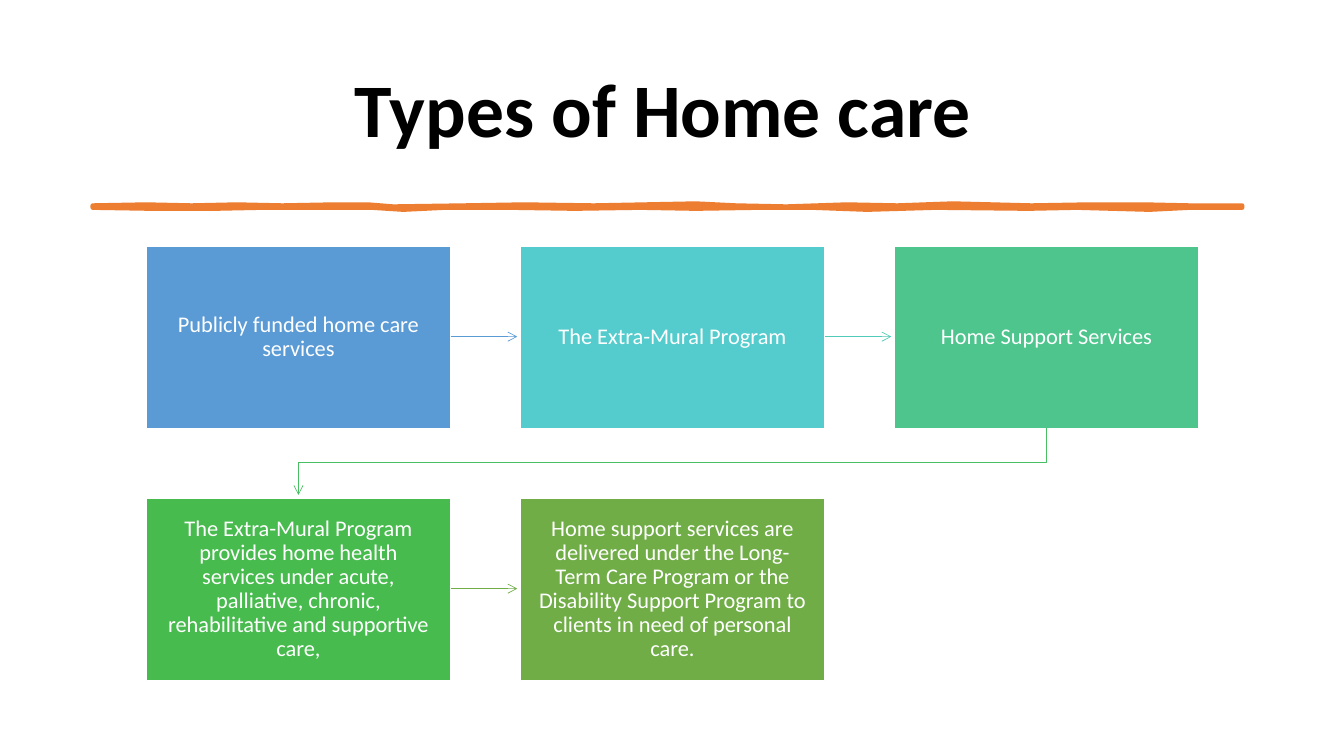
"""Build the "Types of Home care" slide: a title, a hand-drawn rule and a five-step flow."""
from pptx import Presentation
from pptx import util as u
from pptx.dml.color import RGBColor
from pptx.enum import shapes, text
from pptx.oxml import ns
from pptx.oxml import xmlchemy as xc

PX = 9144
SLIDE = (1333, 750)
FONT = "Calibri"
COLORS = {
    "title": "000000", "white": "FFFFFF", "rule": "ED7D31",
    "blue": "5B9BD5", "cyan": "54CCCD", "mint": "4DC58D",
    "green": "48BB4F", "olive": "70AD47",
    "teal_arrow": "52CAB8", "green_arrow": "49BF64",
}
TITLE = "Types of Home care"
TITLE_BOX = (92, 40, 1150, 145)
TITLE_INDENT = 260
STEPS = [
    ("Publicly funded home care services", "blue", "blue"),
    ("The Extra-Mural Program", "cyan", "teal_arrow"),
    ("Home Support Services", "mint", "green_arrow"),
    ("The Extra-Mural Program provides home health services under acute, palliative, "
     "chronic, rehabilitative and supportive care,", "green", "olive"),
    ("Home support services are delivered under the Long-Term Care Program or the "
     "Disability Support Program to clients in need of personal care.", "olive", None),
]
COLUMNS = 3
LEFT, TOP = 145, 244
BOX_W, BOX_H = 302, 181
STEP_X, STEP_Y = 371, 250
ARROW_GAP = 3
RULE_TOP = [(92, 204), (145, 203), (190, 204), (235, 203), (280, 204), (331, 203),
            (365, 203), (390, 205), (460, 204), (520, 203), (589, 204), (640, 203),
            (690, 202), (730, 204), (780, 205), (840, 203), (890, 204), (945, 202),
            (1023, 204), (1080, 203), (1135, 203), (1180, 204), (1232, 204)]
RULE_BOTTOM = [(1232, 206), (1180, 206), (1140, 208), (1068, 206), (1020, 207),
               (928, 206), (860, 208), (806, 206), (753, 206), (690, 207),
               (635, 206), (570, 207), (506, 206), (441, 206), (400, 208),
               (369, 206), (316, 206), (260, 206), (213, 207), (150, 207), (92, 206)]


def rgb(name):
    return RGBColor.from_string(COLORS[name])


def style_text(p, size, color, bold=False):
    p.line_spacing = 0.9
    for r in p.runs:
        r.font.name, r.font.size, r.font.bold = FONT, u.Pt(size), bold
        r.font.color.rgb = rgb(color)


def add_line_part(sp, tag, **attrs):
    part = xc.OxmlElement(tag)
    for key, value in attrs.items():
        part.set(key, value)
    sp._element.spPr.find(ns.qn("a:ln")).append(part)


def add_title(s):
    tf = s.shapes.add_textbox(*(v * PX for v in TITLE_BOX)).text_frame
    tf.word_wrap = True
    tf.vertical_anchor = text.MSO_ANCHOR.MIDDLE
    tf.margin_left = TITLE_INDENT * PX
    tf.text = TITLE
    style_text(tf.paragraphs[0], 54, "title", True)


def add_path(s, points, closed):
    builder = s.shapes.build_freeform(*points[0], scale=PX)
    builder.add_line_segments(points[1:], close=closed)
    sp = builder.convert_to_shape()
    sp.shadow.inherit = False
    return sp


def add_rule(s):
    sp = add_path(s, RULE_TOP + RULE_BOTTOM, True)
    sp.fill.solid()
    sp.fill.fore_color.rgb = sp.line.color.rgb = rgb("rule")
    sp.line.width = u.Pt(3.25)
    add_line_part(sp, "a:round")


def add_box(s, x, y, words, color):
    sp = s.shapes.add_shape(shapes.MSO_SHAPE.RECTANGLE,
                            *(v * PX for v in (x, y, BOX_W, BOX_H)))
    sp.shadow.inherit = False
    sp.fill.solid()
    sp.fill.fore_color.rgb = rgb(color)
    sp.line.color.rgb = rgb("white")
    sp.line.width = u.Pt(1)
    tf = sp.text_frame
    tf.word_wrap = True
    tf.vertical_anchor = text.MSO_ANCHOR.MIDDLE
    tf.margin_left = tf.margin_right = 15 * PX
    tf.margin_top = tf.margin_bottom = 16 * PX
    tf.text = words
    p = tf.paragraphs[0]
    p.alignment = text.PP_ALIGN.CENTER
    style_text(p, 16, "white")


def add_arrow(s, start, end, color):
    (x1, y1), (x2, y2) = start, end
    if y1 == y2:
        sp = s.shapes.add_connector(shapes.MSO_CONNECTOR.STRAIGHT,
                                    *(v * PX for v in start + end))
        sp._element.spPr.append(xc.OxmlElement("a:effectLst"))
    else:
        bend = (y1 + y2 + ARROW_GAP) // 2
        sp = add_path(s, [start, (x1, bend), (x2, bend), end], False)
        sp.fill.background()
    sp.line.color.rgb = rgb(color)
    sp.line.width = u.Pt(0.5)
    add_line_part(sp, "a:tailEnd", type="arrow")


def main():
    prs = Presentation()
    prs.slide_width, prs.slide_height = (v * PX for v in SLIDE)
    s = prs.slides.add_slide(prs.slide_layouts[6])
    add_title(s)
    add_rule(s)
    spots = [(LEFT + i % COLUMNS * STEP_X, TOP + i // COLUMNS * STEP_Y)
             for i in range(len(STEPS))]
    for (x, y), (words, color, _) in zip(spots, STEPS):
        add_box(s, x, y, words, color)
    for (x, y), (nx, ny), (_, _, color) in zip(spots, spots[1:], STEPS):
        if ny == y:
            mid = y + BOX_H // 2
            start, end = (x + BOX_W, mid), (nx - ARROW_GAP, mid)
        else:
            start, end = (x + BOX_W // 2, y + BOX_H), (nx + BOX_W // 2, ny - ARROW_GAP)
        add_arrow(s, start, end, color)
    prs.save("out.pptx")


if __name__ == "__main__":
    main()
